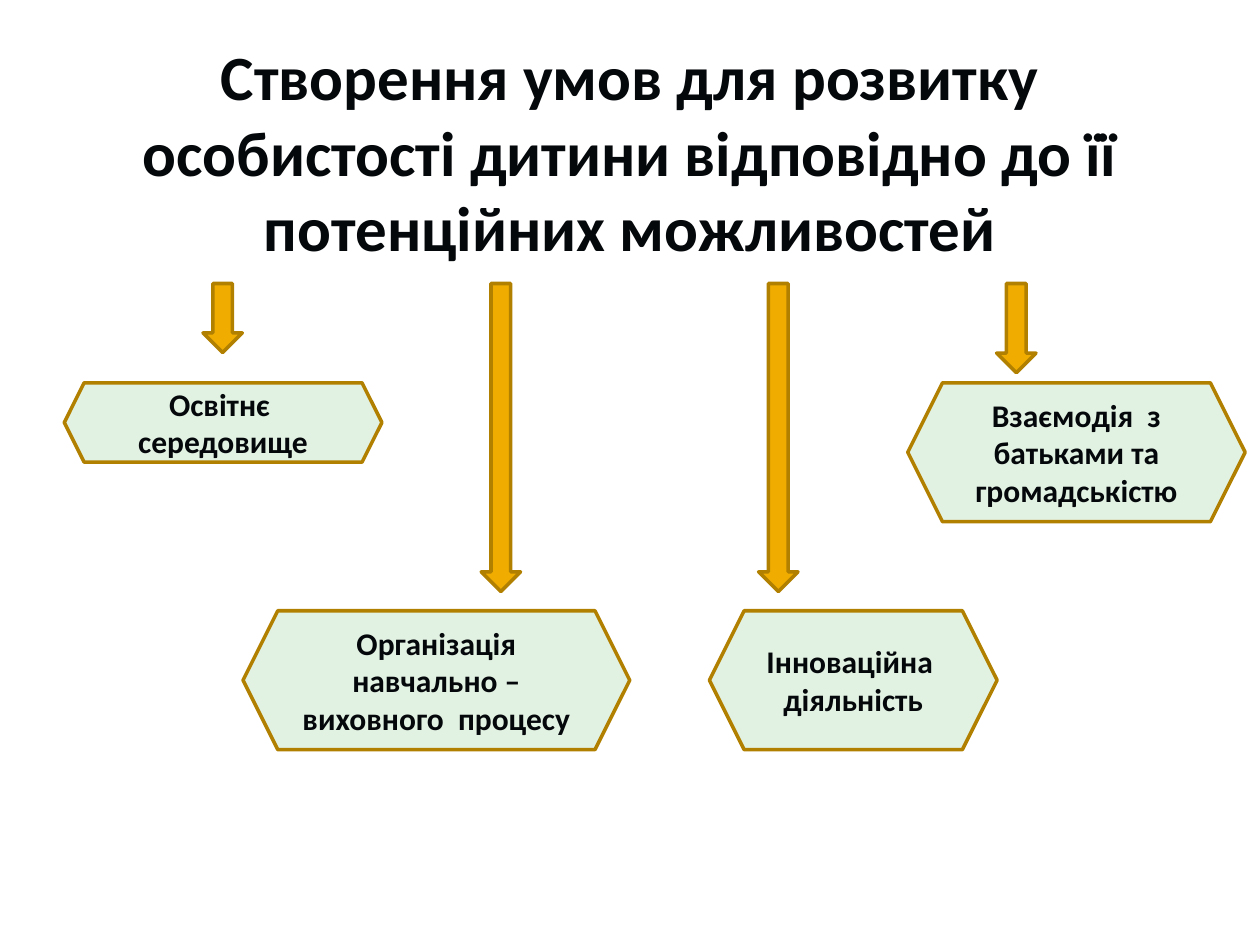
import pptx
import pptx.util
import pptx.dml.color
import pptx.enum.shapes
import pptx.enum.text

Pt = pptx.util.Pt
RGBColor = pptx.dml.color.RGBColor
MSO_SHAPE = pptx.enum.shapes.MSO_SHAPE

INK = RGBColor(0x05, 0x08, 0x0B)
AMBER = RGBColor(0xF0, 0xAD, 0x00)
BRONZE = RGBColor(0xB2, 0x80, 0x00)
MINT = RGBColor(0xE1, 0xF1, 0xE2)

TITLE = "Створення умов для розвитку особистості дитини відповідно до її потенційних можливостей"
TITLE_BOX = (36, 21.6, 648, 129.6)

ARROW_TOP = 162
ARROW_WIDTH = 22.5
ARROWS = [(116, 39.5), (569.5, 51), (275, 176), (433.5, 176)]

UPPER_ROW = 218.75
LOWER_ROW = 349
CONDITIONS = [
    ("Освітнє  середовище", 36.75, UPPER_ROW, 181.5, 45.4),
    ("Організація навчально – виховного  процесу", 138.9, LOWER_ROW, 221, 79.4),
    ("Інноваційна  діяльність", 405.4, LOWER_ROW, 164.4, 79.4),
    ("Взаємодія  з батьками та громадськістю", 518.75, UPPER_ROW, 192.8, 79.4),
]


def write_text(shape, text, size):
    frame = shape.text_frame
    frame.word_wrap = True
    frame.vertical_anchor = pptx.enum.text.MSO_ANCHOR.MIDDLE
    paragraph = frame.paragraphs[0]
    paragraph.text = text
    paragraph.alignment = pptx.enum.text.PP_ALIGN.CENTER
    font = paragraph.runs[0].font
    for name, value in {"name": "Calibri", "size": Pt(size), "bold": True}.items():
        setattr(font, name, value)
    font.color.rgb = INK


def add_outlined_shape(slide, kind, box, fill):
    shape = slide.shapes.add_shape(kind, *map(Pt, box))
    shape.shadow.inherit = False
    shape.fill.solid()
    shape.fill.fore_color.rgb = fill
    shape.line.color.rgb = BRONZE
    shape.line.width = Pt(2)
    return shape


def main():
    presentation = pptx.Presentation()
    presentation.slide_width, presentation.slide_height = Pt(720), Pt(540)
    slide = presentation.slides.add_slide(presentation.slide_layouts[6])

    write_text(slide.shapes.add_textbox(*map(Pt, TITLE_BOX)), TITLE, 36)
    for left, height in ARROWS:
        box = (left, ARROW_TOP, ARROW_WIDTH, height)
        add_outlined_shape(slide, MSO_SHAPE.DOWN_ARROW, box, AMBER)
    for text, *box in CONDITIONS:
        write_text(add_outlined_shape(slide, MSO_SHAPE.HEXAGON, box, MINT), text, 18)

    presentation.save("out.pptx")


if __name__ == "__main__":
    main()
